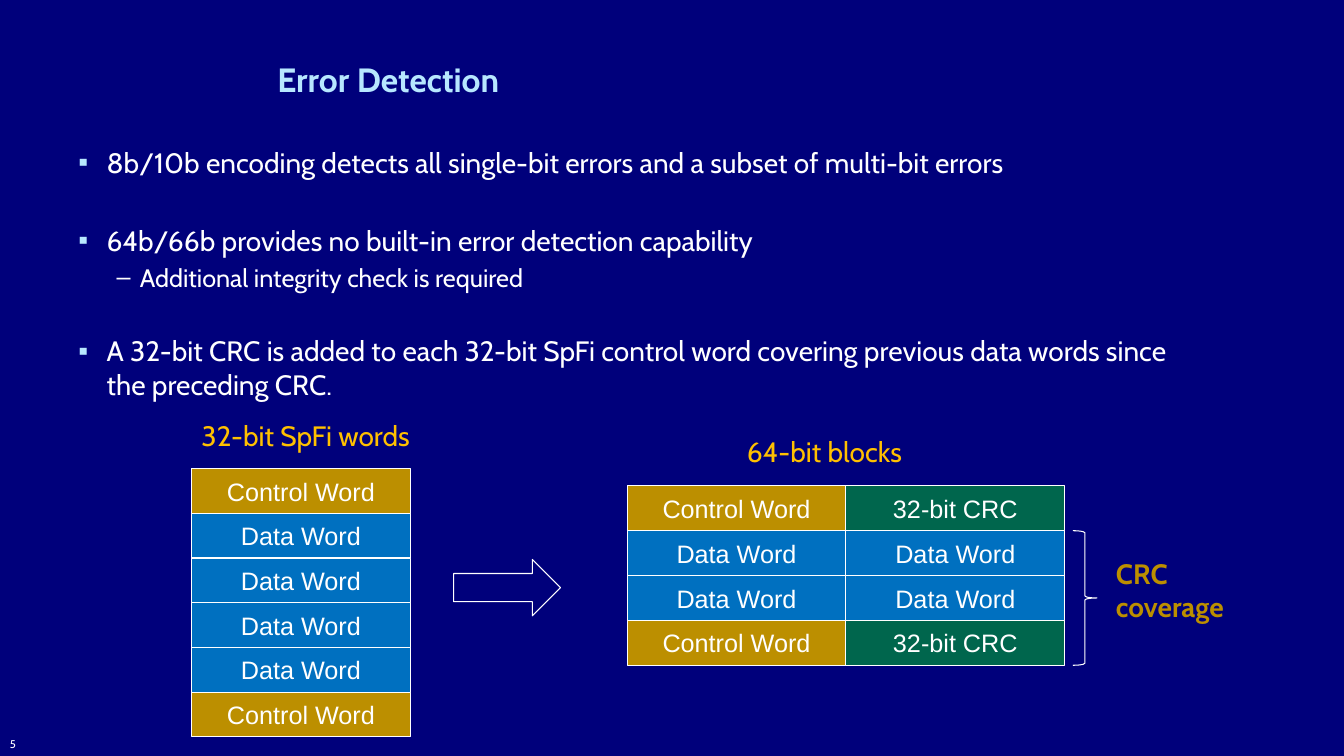
from lxml import etree
from pptx import Presentation
from pptx.dml.color import RGBColor
from pptx.enum import shapes, text
from pptx.oxml.ns import qn
from pptx.util import Inches, Pt

NAVY = RGBColor(0x00, 0x00, 0x7B)
WHITE = RGBColor(0xFF, 0xFF, 0xFF)
PALE_BLUE = RGBColor(0xB7, 0xE7, 0xFF)
GOLD = RGBColor(0xBC, 0x8F, 0x00)
AMBER = RGBColor(0xFF, 0xC0, 0x00)
BLUE = RGBColor(0x00, 0x70, 0xC0)
GREEN = RGBColor(0x00, 0x66, 0x4D)

CONTROL = ("Control Word", GOLD)
DATA = ("Data Word", BLUE)
CRC = ("32-bit CRC", GREEN)

# Level: (left margin, hanging indent, bullet, bullet colour, size)
LEVELS = [(0.28, -0.28, "▪", PALE_BLUE, 20), (0.61, -0.23, "–", WHITE, 18)]
# Level, space before in points, text
BULLETS = [
    (0, 0, "8b/10b encoding detects all single-bit errors and a subset of multi-bit errors"),
    (0, 32, "64b/66b provides no built-in error detection capability"),
    (1, 3.6, "Additional integrity check is required"),
    (0, 29.5, "A 32-bit CRC is added to each 32-bit SpFi control word covering "
              "previous data words since the preceding CRC."),
]


def add_run(p, words, size, color, font="Cabin", bold=False):
    r = p.add_run()
    r.text = words
    r.font.name, r.font.size, r.font.bold = font, Pt(size), bold
    r.font.color.rgb = color


def add_text(s, box, words, size, color, bold=False, anchor=text.MSO_ANCHOR.TOP):
    tf = s.shapes.add_textbox(*map(Inches, box)).text_frame
    tf.word_wrap = True
    tf.vertical_anchor = anchor
    add_run(tf.paragraphs[0], words, size, color, bold=bold)


def add_outlined(s, kind, box, fill=None):
    sp = s.shapes.add_shape(kind, *map(Inches, box))
    sp.shadow.inherit = False
    sp.line.color.rgb, sp.line.width = WHITE, Pt(0.75)
    if fill is None:
        sp.fill.background()
    else:
        sp.fill.solid()
        sp.fill.fore_color.rgb = fill
    return sp


def set_bullet(p, level):
    left, indent, mark, color, _ = LEVELS[level]
    pPr = p._p.get_or_add_pPr()
    pPr.set("marL", str(Inches(left)))
    pPr.set("indent", str(Inches(indent)))
    pPr.set("lvl", str(level))
    bu_clr = etree.SubElement(pPr, qn("a:buClr"))
    etree.SubElement(bu_clr, qn("a:srgbClr")).set("val", str(color))
    etree.SubElement(pPr, qn("a:buFont")).set("typeface", "Arial")
    etree.SubElement(pPr, qn("a:buChar")).set("char", mark)


def add_title(s, box, words):
    title = s.shapes.title
    title.left, title.top, title.width, title.height = map(Inches, box)
    tf = title.text_frame
    tf.vertical_anchor = text.MSO_ANCHOR.MIDDLE
    p = tf.paragraphs[0]
    p.alignment = text.PP_ALIGN.LEFT
    add_run(p, words, 24, PALE_BLUE, bold=True)


def add_bullets(s, box):
    tf = s.shapes.add_textbox(*map(Inches, box)).text_frame
    tf.word_wrap = True
    for i, (level, before, words) in enumerate(BULLETS):
        p = tf.add_paragraph() if i else tf.paragraphs[0]
        set_bullet(p, level)
        p.space_before = Pt(before)
        add_run(p, words, LEVELS[level][4], WHITE)


def add_word_grid(s, box, rows):
    """Fill the box with equal cells, one per word."""
    left, top, width, height = box
    h = height / len(rows)
    for i, row in enumerate(rows):
        w = width / len(row)
        for j, (label, fill) in enumerate(row):
            cell = (left + j * w, top + i * h, w, h)
            sp = add_outlined(s, shapes.MSO_SHAPE.RECTANGLE, cell, fill)
            tf = sp.text_frame
            tf.vertical_anchor = text.MSO_ANCHOR.MIDDLE
            p = tf.paragraphs[0]
            p.alignment = text.PP_ALIGN.CENTER
            add_run(p, label, 18, WHITE, font="Arial")


def add_spfi_words(s, box):
    left, top, width, _ = box
    add_text(s, (left, top - 0.55, width + 0.3, 0.5), "32-bit SpFi words", 20, AMBER)
    add_word_grid(s, box, [[CONTROL]] + [[DATA]] * 4 + [[CONTROL]])


def add_blocks(s, box):
    left, top, width, height = box
    right, row = left + width, height / 4
    add_text(s, (left + 1.09, top - 0.56, 2.47, 0.5), "64-bit blocks", 20, AMBER)
    add_word_grid(s, box, [[CONTROL, CRC], [DATA, DATA], [DATA, DATA], [CONTROL, CRC]])
    # Brace over the rows that the CRC covers
    add_outlined(s, shapes.MSO_SHAPE.RIGHT_BRACE,
                 (right + 0.08, top + row, 0.24, 3 * row))
    add_text(s, (right + 0.41, top + 0.65, 1.53, 0.86), "CRC coverage", 20, GOLD, bold=True)


def main():
    prs = Presentation()
    prs.slide_width, prs.slide_height = Inches(13.33), Inches(7.5)
    s = prs.slides.add_slide(prs.slide_layouts[5])
    s.background.fill.solid()
    s.background.fill.fore_color.rgb = NAVY

    # Title, bullets and slide number
    add_title(s, (2.65, 0.49, 10.45, 0.59), "Error Detection")
    add_bullets(s, (0.68, 1.39, 11.06, 2.56))
    add_text(s, (0, 6.98, 1.42, 0.52), "5", 8, WHITE, anchor=text.MSO_ANCHOR.BOTTOM)

    # Words packed into blocks
    add_spfi_words(s, (1.9, 4.65, 2.17, 2.66))
    add_outlined(s, shapes.MSO_SHAPE.RIGHT_ARROW, (4.5, 5.55, 1.06, 0.56))
    add_blocks(s, (6.22, 4.82, 4.34, 1.78))
    prs.save("out.pptx")


if __name__ == "__main__":
    main()
